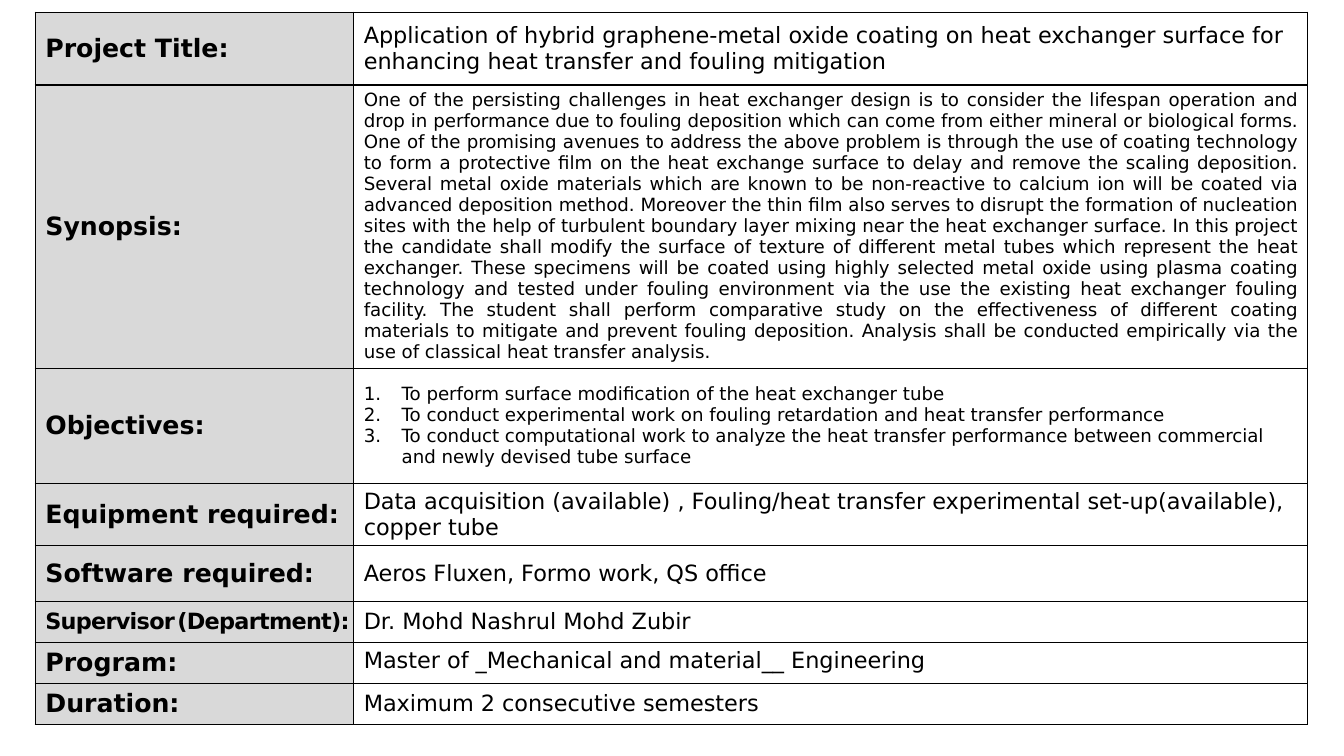
from dataclasses import dataclass

from lxml.etree import SubElement
from pptx import Presentation
from pptx.dml.color import RGBColor
from pptx.enum.text import MSO_ANCHOR as Anchor, PP_ALIGN as Align
from pptx.oxml import parse_xml
from pptx.oxml.ns import nsdecls, qn
from pptx.util import Pt

FONT = "DejaVu Sans"
BLACK, GREY = "000000", "D9D9D9"
COLUMN_WIDTHS = (227.5, 681.1)
LIST_INDENT = 27
TIGHT = -50  # letter spacing in hundredths of a point


@dataclass
class Run:
    text: str
    size: float
    bold: bool = False
    spacing: int = 0


@dataclass
class Row:
    height: float
    label: list[Run]
    content: list[list[Run]]  # one list of runs per paragraph
    align: Align = Align.LEFT
    anchor: Anchor = Anchor.MIDDLE
    numbered: bool = False
    label_margin_right: float = 7.2


def label(text: str) -> list[Run]:
    return [Run(text, 18, bold=True)]


def body(*texts: str, size: float = 16) -> list[list[Run]]:
    return [[Run(text, size)] for text in texts]


SYNOPSIS_SENTENCES = (
    "One of the persisting challenges in heat exchanger design is to consider the lifespan "
    "operation and drop in performance due to fouling deposition which can come from either "
    "mineral or biological forms.",
    "One of the promising avenues to address the above problem is through the use of coating "
    "technology to form a protective film on the heat exchange surface to delay and remove the "
    "scaling deposition.",
    "Several metal oxide materials which are known to be non-reactive to calcium ion will be "
    "coated via advanced deposition method.",
    "Moreover the thin film also serves to disrupt the formation of nucleation sites with the "
    "help of turbulent boundary layer mixing near the heat exchanger surface.",
    "In this project the candidate shall modify the surface of texture of different metal tubes "
    "which represent the heat exchanger.",
    "These specimens will be coated using highly selected metal oxide using plasma coating "
    "technology and tested under fouling environment via the use the existing heat exchanger "
    "fouling facility.",
    "The student shall perform comparative study on the effectiveness of different coating "
    "materials to mitigate and prevent fouling deposition.",
    "Analysis shall be conducted empirically via the use of classical heat transfer analysis.",
)

ROWS = [
    Row(52, label("Project Title:"), body(
        "Application of hybrid graphene-metal oxide coating on heat exchanger surface for "
        "enhancing heat transfer and fouling mitigation")),
    Row(191.5, label("Synopsis:"), body(" ".join(SYNOPSIS_SENTENCES), size=13),
        align=Align.JUSTIFY),
    Row(82.4, label("Objectives:"), body(
        "To perform surface modification of the heat exchanger tube",
        "To conduct experimental work on fouling retardation and heat transfer performance",
        "To conduct computational work to analyze the heat transfer performance between "
        "commercial and newly devised tube surface", size=13), numbered=True),
    Row(37.4, label("Equipment required:"), body(
        "Data acquisition (available) , Fouling/heat transfer experimental "
        "set-up(available), copper tube")),
    Row(40, label("Software required:"), body("Aeros Fluxen, Formo work, QS office")),
    Row(29.3, [Run("Supervisor", 16, True, TIGHT), Run(" ", 5, True, TIGHT),
               Run("(Department):", 16, True, TIGHT)],
        body("Dr. Mohd Nashrul Mohd Zubir"), label_margin_right=0),
    Row(29.3, label("Program:"), body("Master of _Mechanical and material__ Engineering"),
        anchor=Anchor.TOP),
    Row(29.3, label("Duration:"), body("Maximum 2 consecutive semesters")),
]


def colour(hex_value: str) -> RGBColor:
    return RGBColor.from_string(hex_value)


def set_all(target: object, values: dict) -> None:
    for name, value in values.items():
        setattr(target, name, value)


def add_borders(cell) -> None:
    properties = cell._tc.get_or_add_tcPr()
    for position, side in enumerate(("lnL", "lnR", "lnT", "lnB")):
        properties.insert(position, parse_xml(
            f'<a:{side} {nsdecls("a")} w="{Pt(1)}"><a:solidFill>'
            f'<a:srgbClr val="{BLACK}"/></a:solidFill></a:{side}>'))


def add_number(paragraph) -> None:
    properties = paragraph._p.get_or_add_pPr()
    properties.set("marL", str(Pt(LIST_INDENT)))
    properties.set("indent", str(-Pt(LIST_INDENT)))
    SubElement(properties, qn("a:buAutoNum"), type="arabicPeriod")


def fill_cell(cell, paragraphs: list[list[Run]], align: Align = Align.LEFT,
              anchor: Anchor = Anchor.MIDDLE, numbered: bool = False) -> None:
    cell.vertical_anchor = anchor
    for index, runs in enumerate(paragraphs):
        frame = cell.text_frame
        paragraph = frame.add_paragraph() if index else frame.paragraphs[0]
        paragraph.alignment = align
        if numbered:
            add_number(paragraph)
        for item in runs:
            run = paragraph.add_run()
            run.text = item.text
            set_all(run.font, {"name": FONT, "size": Pt(item.size), "bold": item.bold})
            run.font.color.rgb = colour(BLACK)
            if item.spacing:
                run.font._element.set("spc", str(item.spacing))
    add_borders(cell)


def add_project_table(slide) -> None:
    frame = slide.shapes.add_table(
        len(ROWS), len(COLUMN_WIDTHS), Pt(25.2), Pt(8.8),
        Pt(sum(COLUMN_WIDTHS)), Pt(sum(row.height for row in ROWS)))
    table = frame.table
    set_all(table, {"first_row": False, "horz_banding": False})
    for column, width in zip(table.columns, COLUMN_WIDTHS):
        column.width = Pt(width)
    for index, row in enumerate(ROWS):
        table.rows[index].height = Pt(row.height)
        label_cell, content_cell = table.cell(index, 0), table.cell(index, 1)
        label_cell.fill.solid()
        label_cell.fill.fore_color.rgb = colour(GREY)
        label_cell.margin_right = Pt(row.label_margin_right)
        content_cell.fill.background()
        fill_cell(label_cell, [row.label])
        fill_cell(content_cell, row.content, row.align, row.anchor, row.numbered)


def main() -> None:
    presentation = Presentation()
    set_all(presentation, {"slide_width": Pt(960), "slide_height": Pt(540)})
    slide = presentation.slides.add_slide(presentation.slide_layouts[6])
    add_project_table(slide)
    presentation.save("out.pptx")


if __name__ == "__main__":
    main()
